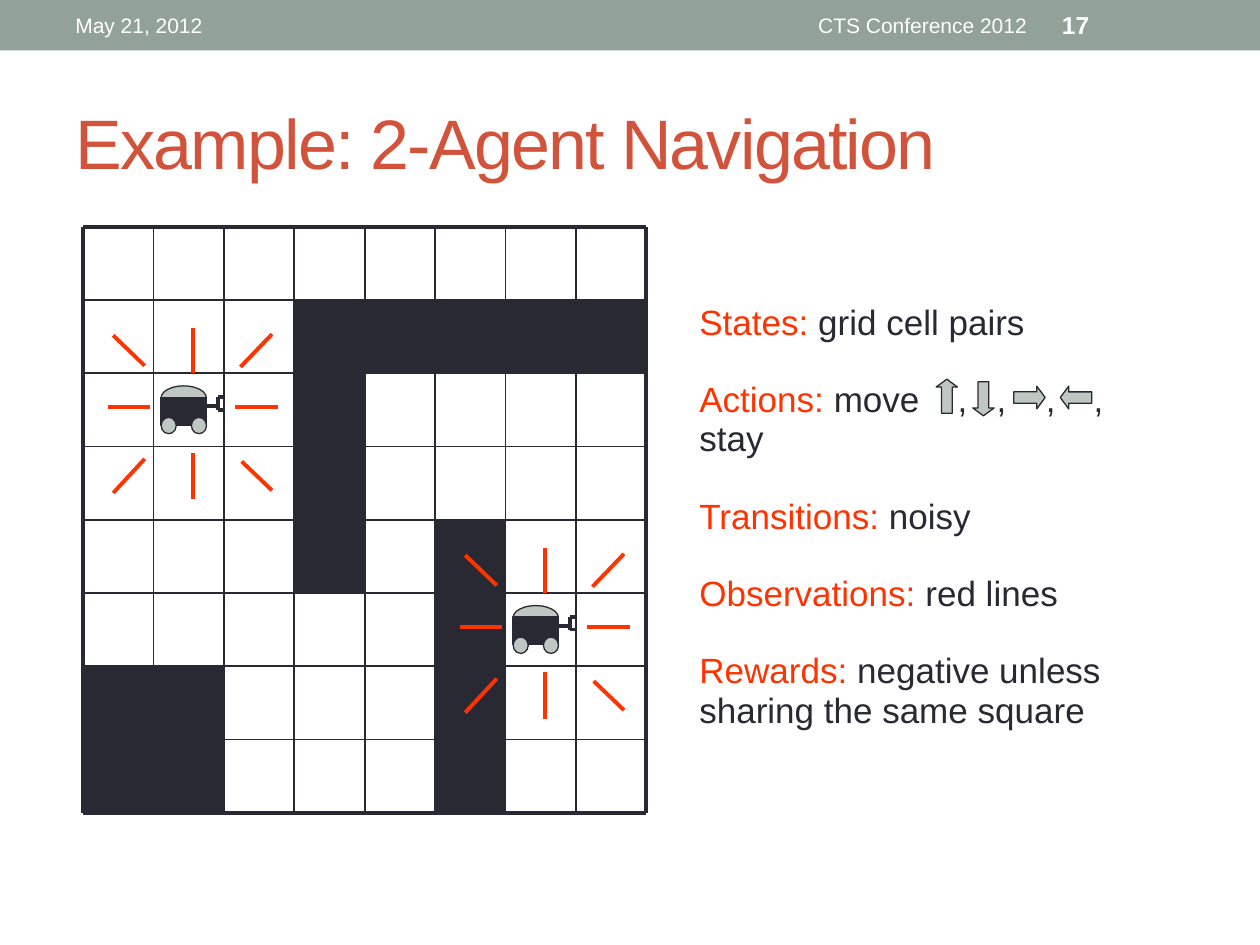
from dataclasses import dataclass
from lxml import etree
from pptx import Presentation
from pptx import util as u
from pptx.dml.color import RGBColor
from pptx.enum import shapes, text
from pptx.oxml.ns import qn

In, Pt = u.Inches, u.Pt
Geo = shapes.MSO_SHAPE


@dataclass(frozen=True)
class Theme:
    band: str = "93A299"
    title: str = "D2533C"
    ink: str = "292934"
    pale: str = "BEC7C2"
    red: str = "FF3300"
    white: str = "FFFFFF"
    font: str = "Arial"
    head: float = 40
    body: float = 20
    small: float = 12
    page: float = 14
    thin: float = 1
    edge: float = 0.75
    bold: float = 2.25


T = Theme()


# Basic parts
def shape(on, geo, x, y, w, h, fill, edge=None, turn=0):
    item = on.add_shape(geo, In(x), In(y), In(w), In(h))
    item.shadow.inherit = False
    item.rotation = turn
    item.fill.solid()
    item.fill.fore_color.rgb = RGBColor.from_string(fill)
    if edge:
        item.line.color.rgb = RGBColor.from_string(edge)
        item.line.width = Pt(T.edge)
    else:
        item.line.fill.background()
    return item


def line(on, x1, y1, x2, y2, color, width):
    item = on.add_connector(
        shapes.MSO_CONNECTOR.STRAIGHT, In(x1), In(y1), In(x2), In(y2))
    item.line.color.rgb = RGBColor.from_string(color)
    item.line.width = Pt(width)
    etree.SubElement(item._element.spPr, qn("a:effectLst"))


def frame(on, x, y, w, h, **form):
    tf = on.add_textbox(In(x), In(y), In(w), In(h)).text_frame
    form = {"word_wrap": True, **form}
    for key, val in form.items():
        setattr(tf, key, val)
    return tf


def write(para, words, color, size, bold=False):
    run = para.add_run()
    run.text = words
    form = {"name": T.font, "size": Pt(size), "bold": bold}
    for key, val in form.items():
        setattr(run.font, key, val)
    run.font.color.rgb = RGBColor.from_string(color)
    return run


# Top band with date, event and page number
def header(on, x, y, w, h):
    shape(on, Geo.RECTANGLE, x, y, w, h, T.band)
    left, right = text.PP_ALIGN.LEFT, text.PP_ALIGN.RIGHT
    items = [
        (0.5, 3.17, "May 21, 2012", left, T.small, False),
        (3.75, 4.5, "CTS Conference 2012", right, T.small, False),
        (8.33, 1.17, "17", left, T.page, True),
    ]
    for dx, wide, words, align, size, bold in items:
        tf = frame(on, x + dx, y + 0.02, wide, h - 0.04,
                   vertical_anchor=text.MSO_ANCHOR.MIDDLE)
        para = tf.paragraphs[0]
        para.alignment = align
        write(para, words, T.white, size, bold)


def title(on, x, y, w, h):
    tf = frame(on, x, y, w, h, vertical_anchor=text.MSO_ANCHOR.MIDDLE)
    run = write(tf.paragraphs[0], "Example: 2-Agent Navigation",
                T.title, T.head)
    run.font._element.set("spc", "-100")


# Robot with its eight sensor rays, around the cell at x, y
def robot(on, x, y):
    on = on.add_group_shape().shapes
    parts = [
        (Geo.OVAL, 0.06, 0.1, 0.36, 0.19, T.pale),
        (Geo.RECTANGLE, 0.06, 0.19, 0.36, 0.22, T.ink),
        (Geo.OVAL, 0.06, 0.35, 0.12, 0.13, T.pale),
        (Geo.OVAL, 0.3, 0.35, 0.12, 0.13, T.pale),
    ]
    for geo, dx, dy, w, h, fill in parts:
        shape(on, geo, x + dx, y + dy, w, h, fill, T.ink)
    grip = [
        (0.42, 0.26, 0.51, 0.26), (0.51, 0.19, 0.51, 0.29),
        (0.51, 0.19, 0.57, 0.19), (0.51, 0.29, 0.57, 0.29),
    ]
    rays = [
        (0.31, 0, 0.31, -0.36), (0.31, 1, 0.31, 0.63),
        (0.99, 0.27, 0.65, 0.27), (-0.03, 0.27, -0.36, 0.27),
        (0.94, -0.31, 0.69, -0.05), (-0.07, 0.68, -0.32, 0.95),
        (-0.07, -0.06, -0.32, -0.3), (0.94, 0.93, 0.7, 0.7),
    ]
    for color, marks in ((T.ink, grip), (T.red, rays)):
        for x1, y1, x2, y2 in marks:
            line(on, x + x1, y + y1, x + x2, y + y2, color, T.bold)


# Grid world: walls, rules and two robots
def world(on, x, y, w, h):
    count = 8
    cw, ch = w / count, h / count
    walls = {1: (3, 4, 5, 6, 7), 2: (3,), 3: (3,), 4: (3, 5),
             5: (5,), 6: (0, 1, 5), 7: (0, 1, 5)}
    grid = on.add_group_shape().shapes
    for row, cols in walls.items():
        for col in cols:
            shape(grid, Geo.RECTANGLE, x + col * cw, y + row * ch,
                  cw, ch, T.ink)
    for i in range(count + 1):
        width = T.bold if i in (0, count) else T.thin
        gx, gy = x + i * cw, y + i * ch
        line(grid, x, gy, x + w, gy, T.ink, width)
        line(grid, gx, y, gx, y + h, T.ink, width)
    for col, row in ((1, 2), (6, 5)):
        robot(on, x + col * cw, y + row * ch)


# Model terms, with move arrows set between the commas
def terms(on, x, y, w, h):
    tf = frame(on, x, y, w, h, margin_left=In(0.12), margin_right=In(0.12),
               margin_top=In(0.06), margin_bottom=In(0.06))
    items = [
        ("States:", " grid cell pairs"),
        ("Actions:", " move\t,\t,\t,\t, stay"),
        ("Transitions:", " noisy"),
        ("Observations:", " red lines"),
        ("Rewards:", " negative unless sharing the same square"),
    ]
    for i, (name, words) in enumerate(items):
        para = tf.paragraphs[0] if i == 0 else tf.add_paragraph()
        para.line_spacing = 0.94
        if i:
            para.space_before = Pt(21.6)
        if "\t" in words:
            tabs = etree.SubElement(para._p.get_or_add_pPr(), qn("a:tabLst"))
            for stop in (2.05, 2.36, 2.75, 3.13):
                etree.SubElement(tabs, qn("a:tab"),
                                 pos=str(In(stop)), algn="l")
        write(para, name, T.red, T.body)
        write(para, words, T.ink, T.body)
    arrows = [
        (2, 0.67, 0.17, 0.27, 0), (2.29, 0.69, 0.17, 0.27, 180),
        (2.65, 0.69, 0.18, 0.25, 90), (3.02, 0.69, 0.18, 0.25, 270),
    ]
    for dx, dy, aw, ah, turn in arrows:
        item = shape(on, Geo.UP_ARROW, x + dx, y + dy - 0.01, aw, ah,
                     T.pale, T.ink, turn)
        item.adjustments[0] = 0.5
        item.adjustments[1] = 0.37


def main():
    deck = Presentation()
    deck.slide_width, deck.slide_height = In(10), In(7.5)
    on = deck.slides.add_slide(deck.slide_layouts[6]).shapes
    header(on, 0, 0, 10, 0.4)
    title(on, 0.5, 0.58, 9, 1.08)
    world(on, 0.66, 1.8, 4.47, 4.65)
    terms(on, 5.43, 2.35, 3.88, 3.46)
    deck.save("out.pptx")


if __name__ == "__main__":
    main()
